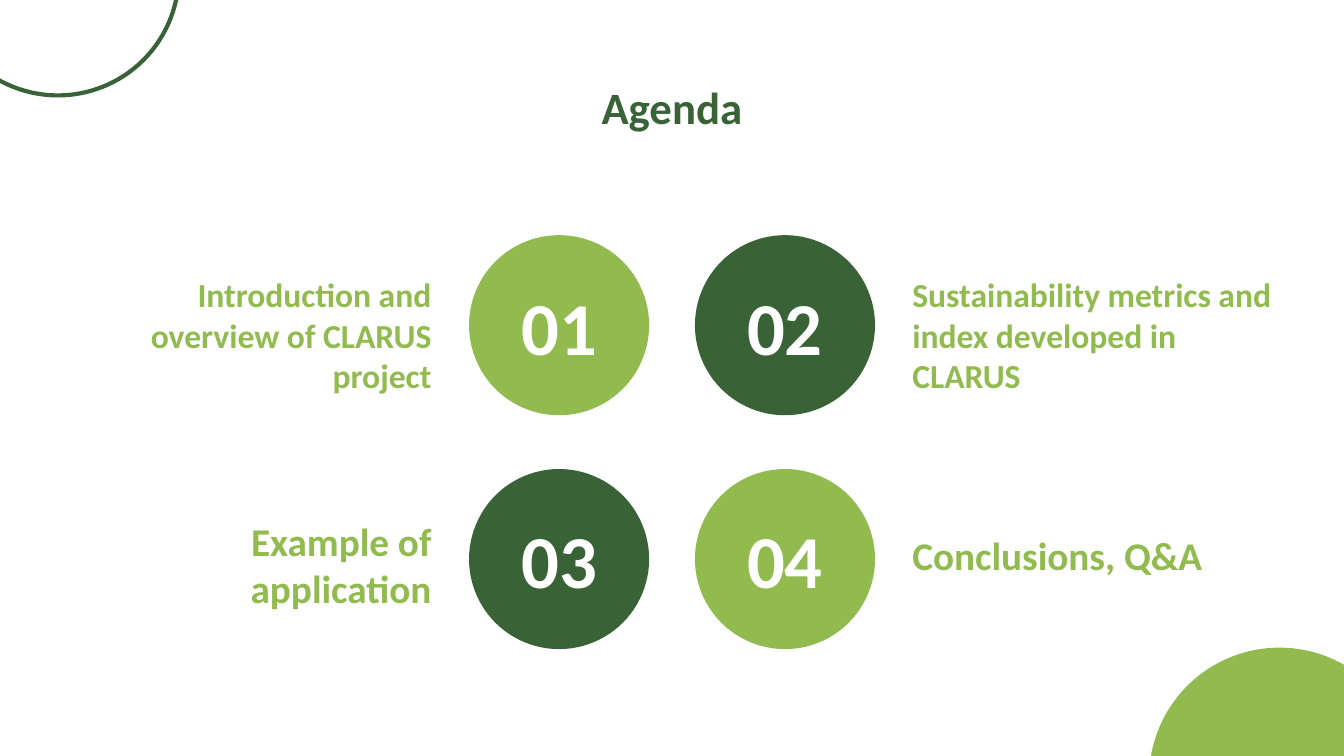
from dataclasses import dataclass

from pptx import Presentation
from pptx.dml.color import RGBColor
from pptx.enum.shapes import MSO_SHAPE
from pptx.enum.text import MSO_ANCHOR, MSO_AUTO_SIZE, PP_ALIGN
from pptx.util import Pt

OVAL = MSO_SHAPE.OVAL
TOP, MIDDLE = MSO_ANCHOR.TOP, MSO_ANCHOR.MIDDLE
LEFT, CENTER, RIGHT = PP_ALIGN.LEFT, PP_ALIGN.CENTER, PP_ALIGN.RIGHT
NO_AUTOFIT = MSO_AUTO_SIZE.NONE
TITLE_ONLY = 5


@dataclass(frozen=True)
class Theme:
    font: str = "Calibri"
    dark: RGBColor = RGBColor(0x39, 0x63, 0x36)
    light: RGBColor = RGBColor(0x91, 0xBA, 0x4F)
    white: RGBColor = RGBColor(0xFF, 0xFF, 0xFF)
    title_size: int = 24
    number_size: int = 40
    long_topic_size: int = 18
    short_topic_size: int = 21


THEME = Theme()
INSET = 7.2
DIAMETER = 96.5
COLUMN_LEFTS = (251.3, 372.3)
ROW_TOPS = (126, 251.3)
TOPIC_HEIGHT = 45.4

TOPICS = (
    ("Introduction and overview of CLARUS project",
     THEME.long_topic_size, 44.6, 139.7, 193.7),
    ("Sustainability metrics and index developed in CLARUS",
     THEME.long_topic_size, 481.7, 139.7, 213.8),
    ("Example of application", THEME.short_topic_size, 44.6, 270, 193.7),
    ("Conclusions, Q&A", THEME.short_topic_size, 481.7, 277.2, 182.9),
)


def write_text(shape, text, size, color, alignment, anchor):
    frame = shape.text_frame
    frame.text = text
    frame.word_wrap = True
    frame.auto_size = NO_AUTOFIT
    frame.vertical_anchor = anchor
    frame.margin_left = frame.margin_right = Pt(INSET)
    frame.margin_top = frame.margin_bottom = Pt(INSET)
    paragraph = frame.paragraphs[0]
    paragraph.alignment = alignment
    paragraph.line_spacing = 1.0
    font = paragraph.runs[0].font
    font.name = THEME.font
    font.size = Pt(size)
    font.bold = True
    font.color.rgb = color


def set_title(slide, text):
    title = slide.shapes.title
    title.left, title.top = Pt(24.5), Pt(35.3)
    title.width, title.height = Pt(671), Pt(45.4)
    write_text(title, text, THEME.title_size, THEME.dark, CENTER, TOP)


def add_circle(slide, left, top, diameter, fill=None, outline=None):
    circle = slide.shapes.add_shape(
        OVAL, Pt(left), Pt(top), Pt(diameter), Pt(diameter))
    circle.shadow.inherit = False
    if fill is None:
        circle.fill.background()
    else:
        circle.fill.solid()
        circle.fill.fore_color.rgb = fill
    if outline is None:
        circle.line.fill.background()
    else:
        circle.line.color.rgb = outline
        circle.line.width = Pt(2.25)
    return circle


def add_topic(slide, index, text, size, left, top, width):
    row, column = divmod(index, 2)
    fill = THEME.light if row == column else THEME.dark
    circle = add_circle(
        slide, COLUMN_LEFTS[column], ROW_TOPS[row], DIAMETER, fill=fill)
    write_text(circle, f"{index + 1:02d}", THEME.number_size,
               THEME.white, CENTER, MIDDLE)
    label = slide.shapes.add_textbox(
        Pt(left), Pt(top), Pt(width), Pt(TOPIC_HEIGHT))
    alignment = LEFT if column else RIGHT
    write_text(label, text, size, THEME.light, alignment, TOP)


def main():
    presentation = Presentation()
    presentation.slide_width, presentation.slide_height = Pt(720), Pt(405)
    slide = presentation.slides.add_slide(
        presentation.slide_layouts[TITLE_ONLY])
    add_circle(slide, -33.8, -78.5, 129.6, outline=THEME.dark)
    add_circle(slide, 615.6, 347, 139.7, fill=THEME.light)
    set_title(slide, "Agenda")
    for index, topic in enumerate(TOPICS):
        add_topic(slide, index, *topic)
    presentation.save("out.pptx")


if __name__ == "__main__":
    main()
